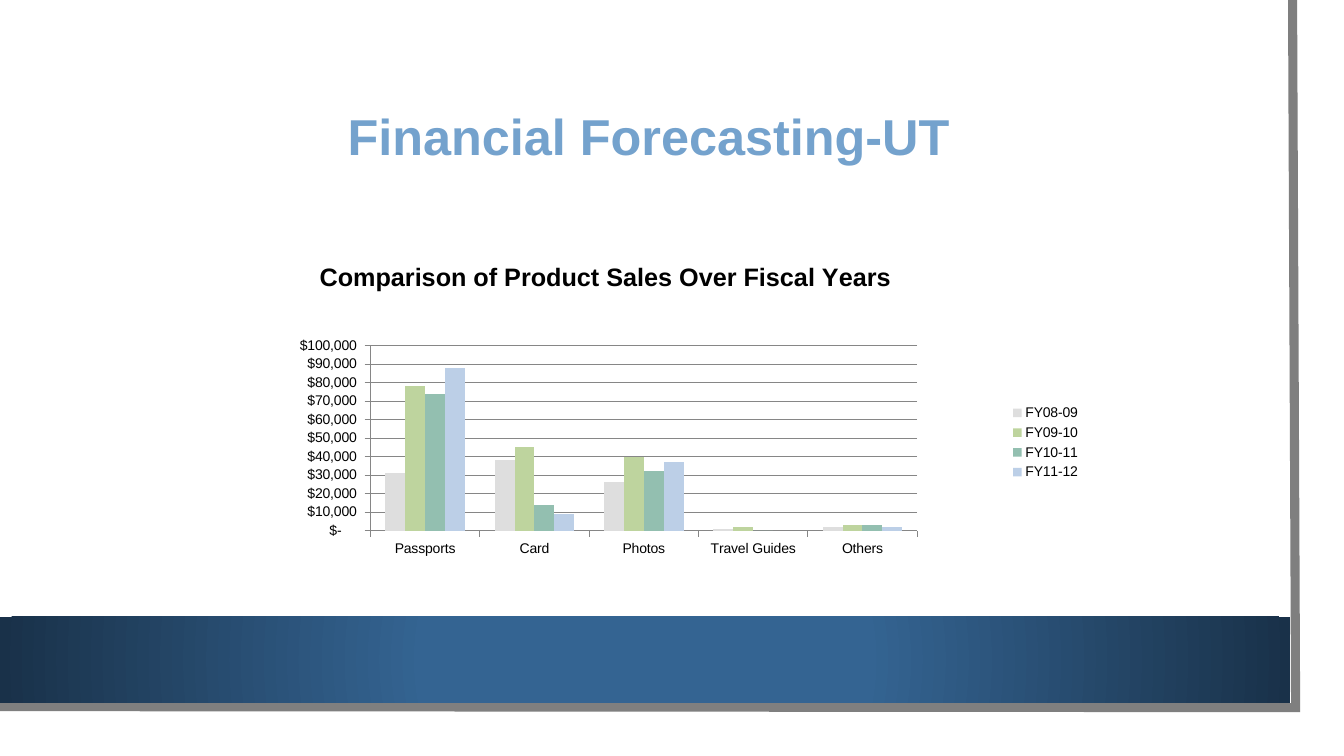
from lxml.etree import SubElement
from pptx import Presentation
from pptx.chart.data import CategoryChartData
from pptx.dml.color import RGBColor
from pptx.enum.chart import XL_CHART_TYPE, XL_LEGEND_POSITION, XL_TICK_MARK
from pptx.enum.shapes import MSO_SHAPE
from pptx.enum.text import MSO_ANCHOR, PP_ALIGN
from pptx.oxml import parse_xml
from pptx.oxml.ns import nsdecls, qn
from pptx.util import Inches, Pt

COLORS = {
    "title": "74A2CD",
    "text": "000000",
    "frame": "7F7F7F",
    "axis": "868686",
    "band": "346492",
    "band_edge": "193149",
}
CATEGORIES = ["Passports", "Card", "Photos", "Travel Guides", "Others"]
SALES = [
    ("FY08-09", "DEDEDE", [31000, 38000, 26000, 1000, 2000]),
    ("FY09-10", "BED49E", [78000, 45000, 40000, 2000, 3000]),
    ("FY10-11", "93BFB0", [74000, 14000, 32000, 0, 3000]),
    ("FY11-12", "BCCFE7", [88000, 9000, 37000, None, 2000]),
]
DOLLARS = r'_("$"* #,##0_);_("$"* \(#,##0\);_("$"* "-"??_);_(@_)'


class SlideBuilder:
    """Hold the style and the current slide, and add its elements."""

    def __init__(self, page, font, colors):
        """Keep the page, its font and its colours."""
        self.page = page
        self.font = font
        self.colors = colors

    def color(self, name):
        """Return a named colour."""
        return RGBColor.from_string(self.colors[name])

    def style(self, font, size, color, bold=False):
        """Format a font."""
        font.name, font.size, font.bold = self.font, Pt(size), bold
        font.color.rgb = self.color(color)

    def title(self, text, left, top, width, height):
        """Place and format the title placeholder."""
        box = self.page.shapes.title
        box.left, box.top = Inches(left), Inches(top)
        box.width, box.height = Inches(width), Inches(height)
        frame = box.text_frame
        frame.text = text
        frame.vertical_anchor = MSO_ANCHOR.MIDDLE
        para = frame.paragraphs[0]
        para.alignment = PP_ALIGN.CENTER
        para.line_spacing = 0.9
        self.style(para.font, 36, "title", True)

    def open_line(self, points, color, weight):
        """Draw an open outline with a sharp corner."""
        corners = [(Inches(x), Inches(y)) for x, y in points]
        builder = self.page.shapes.build_freeform(*corners[0])
        builder.add_line_segments(corners[1:], close=False)
        outline = builder.convert_to_shape()
        outline.shadow.inherit = False
        outline.fill.background()
        outline.line.color.rgb = self.color(color)
        outline.line.width = Pt(weight)
        SubElement(outline.line._get_or_add_ln(), qn("a:miter"), lim="800000")

    def band(self, left, top, width, height):
        """Add a rectangle with a gradient that darkens outwards."""
        band = self.page.shapes.add_shape(
            MSO_SHAPE.RECTANGLE, Inches(left), Inches(top), Inches(width), Inches(height)
        )
        band.shadow.inherit = False
        band.line.fill.background()
        stops = "".join(
            f'<a:gs pos="{position}"><a:srgbClr val="{self.colors[name]}"/></a:gs>'
            for position, name in [(0, "band"), (34000, "band"), (100000, "band_edge")]
        )
        gradient = parse_xml(
            f'<a:gradFill {nsdecls("a")} rotWithShape="1"><a:gsLst>{stops}</a:gsLst>'
            '<a:path path="circle"><a:fillToRect l="50000" t="50000" r="50000" b="50000"/>'
            "</a:path></a:gradFill>"
        )
        band.element.spPr.find(qn("a:prstGeom")).addnext(gradient)

    def place(self, element, index, **settings):
        """Give a chart part a manual layout."""
        for old in element.findall(qn("c:layout")):
            element.remove(old)
        layout = parse_xml(f'<c:layout {nsdecls("c")}><c:manualLayout/></c:layout>')
        for name, value in settings.items():
            SubElement(layout[0], qn(f"c:{name}"), val=str(value))
        element.insert(index, layout)

    def column_chart(self, heading, categories, sales, left, top, width, height):
        """Add a clustered column chart with a heading and a legend."""
        data = CategoryChartData()
        data.categories = categories
        for name, _, values in sales:
            data.add_series(name, values)
        chart = self.page.shapes.add_chart(
            XL_CHART_TYPE.COLUMN_CLUSTERED,
            Inches(left), Inches(top), Inches(width), Inches(height), data,
        ).chart
        self.style(chart.font, 10, "text")
        plot = chart.plots[0]
        plot.gap_width = 150
        plot.vary_by_categories = False
        for series, (_, color, _) in zip(plot.series, sales):
            series.format.fill.solid()
            series.format.fill.fore_color.rgb = RGBColor.from_string(color)
        self.place(
            chart.element.find(f'{qn("c:chart")}/{qn("c:plotArea")}'), 0,
            layoutTarget="inner", xMode="edge", yMode="edge",
            x=0.22, y=0.256, w=0.592, h=0.466,
        )
        self.chart_heading(chart, heading)
        self.axes(chart)
        chart.has_legend = True
        chart.legend.position = XL_LEGEND_POSITION.RIGHT
        chart.legend.include_in_layout = False

    def chart_heading(self, chart, heading):
        """Write the heading of a chart over its plot."""
        chart.has_title = True
        title = chart.chart_title
        title.text_frame.text = heading
        self.style(title.text_frame.paragraphs[0].font, 18, "text", True)
        self.place(title.element, 1, xMode="edge", yMode="edge", x=0.16, y=0.03)
        title.element.find(qn("c:overlay")).set("val", "1")

    def axes(self, chart):
        """Format both axes and the gridlines."""
        values = chart.value_axis
        values.minimum_scale, values.maximum_scale = 0, 100000
        values.major_unit = 10000
        values.has_major_gridlines = True
        values.tick_labels.number_format = DOLLARS
        values.tick_labels.number_format_is_linked = False
        for axis in (chart.category_axis, values):
            axis.major_tick_mark = XL_TICK_MARK.OUTSIDE
            axis.minor_tick_mark = XL_TICK_MARK.NONE
        for part in (chart.category_axis, values, values.major_gridlines):
            part.format.line.color.rgb = self.color("axis")
            part.format.line.width = Pt(0.75)


def main():
    """Build the deck and save it."""
    deck = Presentation()
    deck.slide_width, deck.slide_height = Inches(13.33), Inches(7.5)
    page = deck.slides.add_slide(deck.slide_layouts[5])
    builder = SlideBuilder(page, "Arial", COLORS)
    builder.open_line([(12.82, 0), (12.85, 7.02), (-0.03, 7.01)], "frame", 6.5)
    builder.band(0, 6.12, 12.8, 0.85)
    builder.title("Financial Forecasting-UT", 0.75, 0.75, 11.37, 1.26)
    builder.column_chart(
        "Comparison of Product Sales Over Fiscal Years",
        CATEGORIES, SALES, 1.66, 2.42, 9.16, 3.94,
    )
    deck.save("out.pptx")


if __name__ == "__main__":
    main()
